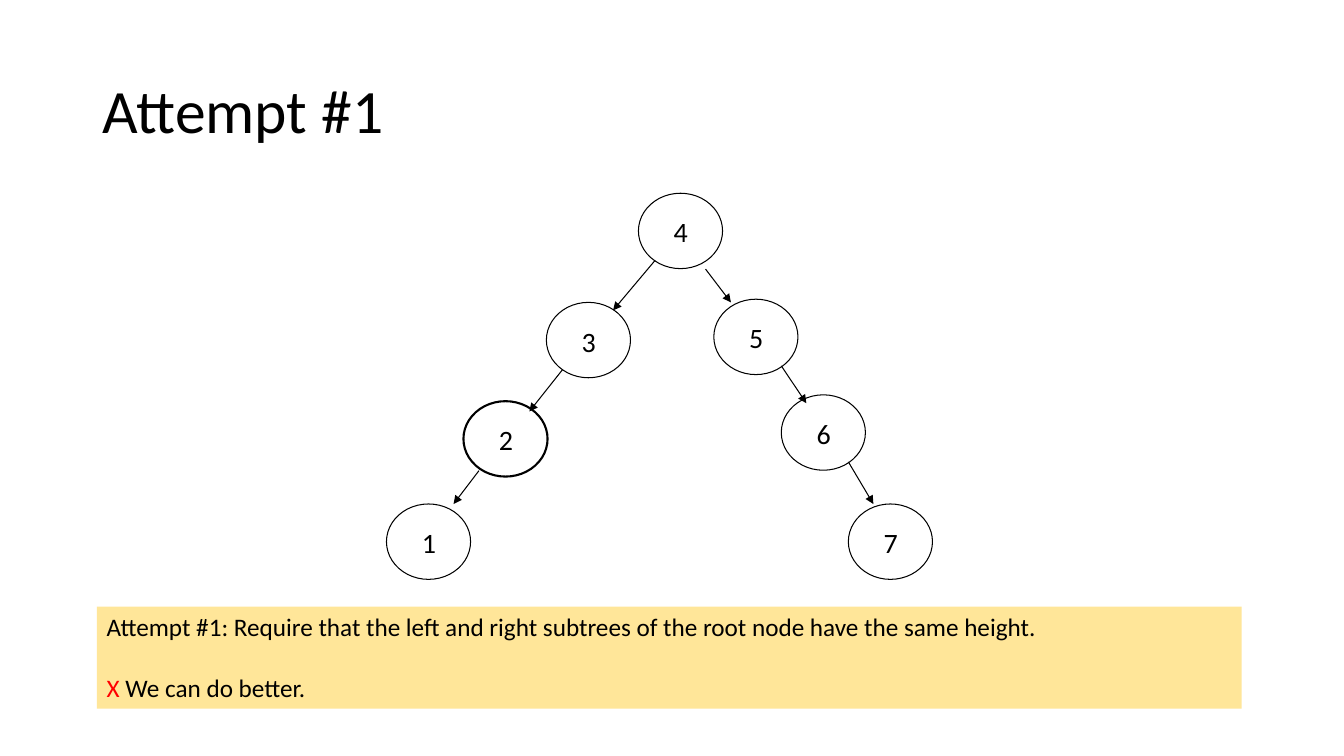
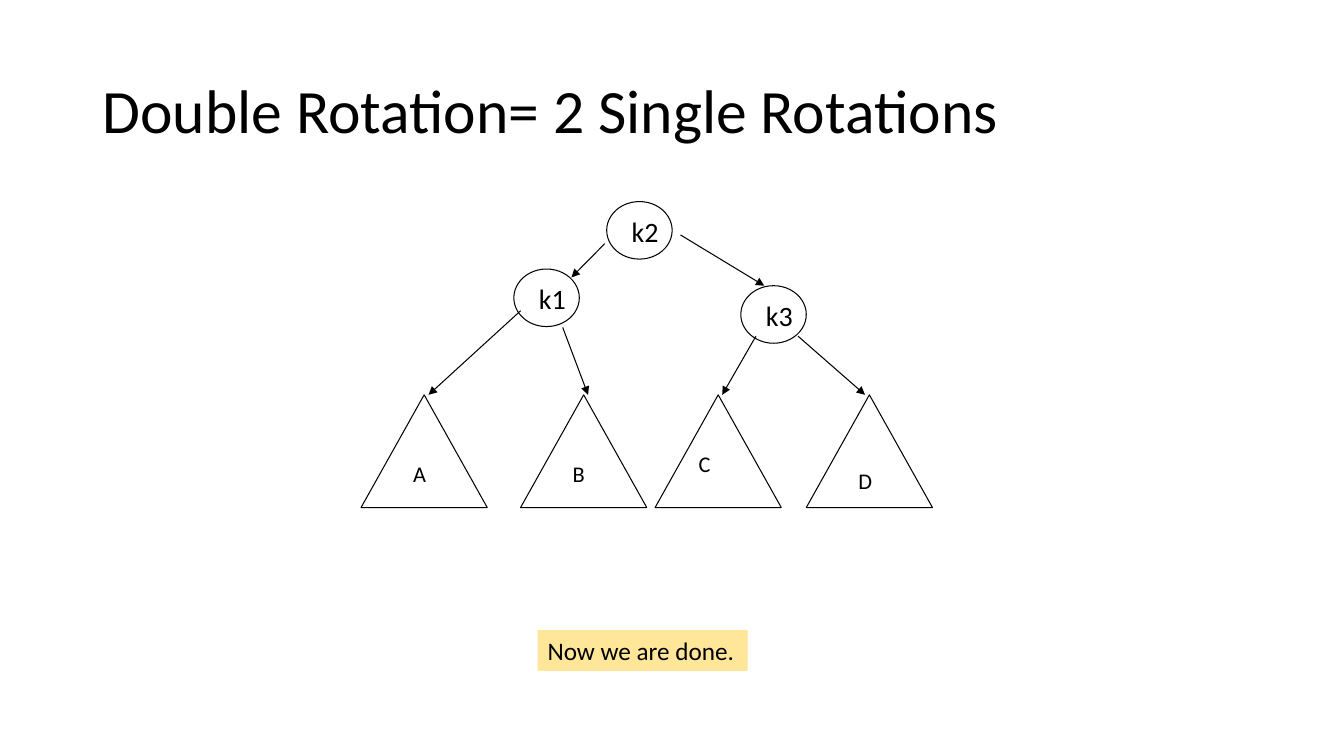
from lxml.etree import SubElement
from pptx import Presentation
from pptx.dml.color import RGBColor
from pptx.enum.shapes import MSO_CONNECTOR, MSO_SHAPE
from pptx.enum.text import MSO_ANCHOR, PP_ALIGN
from pptx.oxml.ns import qn
from pptx.util import Cm, Pt

BLACK = RGBColor(0x00, 0x00, 0x00)
RED = RGBColor(0xFF, 0x00, 0x00)
SAND = RGBColor(0xFF, 0xE6, 0x99)
FONT = "Calibri"
TREE_NODE = (2.12, 1.9)
KEY_NODE = (1.65, 1.45)
SUBTREE = (3.18, 2.84)


class Deck:
    """Holds the shared style and the current slide."""

    def __init__(self):
        self.prs = Presentation()
        self.prs.slide_width = Cm(33.87)
        self.prs.slide_height = Cm(19.05)
        self.s = None

    def slide(self, title):
        self.s = self.prs.slides.add_slide(self.prs.slide_layouts[5])
        sp = self.s.shapes.title
        sp.left, sp.top, sp.width, sp.height = Cm(2.33), Cm(1.01), Cm(29.21), Cm(3.68)
        tf = sp.text_frame
        tf.word_wrap = True
        tf.vertical_anchor = MSO_ANCHOR.MIDDLE
        p = tf.paragraphs[0]
        p.alignment = PP_ALIGN.LEFT
        p.line_spacing = 0.9
        self.run(p, title, 44)

    def run(self, p, text, size, color=BLACK):
        r = p.add_run()
        r.text = text
        r.font.name = FONT
        r.font.size = Pt(size)
        r.font.color.rgb = color

    def text(self, x, y, w, h, paragraphs, size, fill=None, gap=0):
        sp = self.s.shapes.add_textbox(Cm(x), Cm(y), Cm(w), Cm(h))
        if fill is not None:
            sp.fill.solid()
            sp.fill.fore_color.rgb = fill
        tf = sp.text_frame
        tf.word_wrap = True
        for i, runs in enumerate(paragraphs):
            p = tf.add_paragraph() if i else tf.paragraphs[0]
            if i:
                p.space_before = Pt(gap)
            for text, color in runs:
                self.run(p, text, size, color)

    def outline(self, kind, x, y, size, weight=0.75):
        sp = self.s.shapes.add_shape(kind, Cm(x), Cm(y), *map(Cm, size))
        sp.shadow.inherit = False
        sp.fill.background()
        sp.line.color.rgb = BLACK
        sp.line.width = Pt(weight)

    def tree_node(self, label, x, y, weight=0.75):
        self.outline(MSO_SHAPE.OVAL, x, y, TREE_NODE, weight)
        self.text(x + 0.64, y + 0.42, 0.86, 1.12, [[(label, BLACK)]], 20)

    def key_node(self, label, x, y):
        self.outline(MSO_SHAPE.OVAL, x, y, KEY_NODE)
        self.text(x + 0.38, y + 0.2, 1.22, 1.09, [[(label, BLACK)]], 20)

    def subtree(self, label, x, dx, dy):
        y = 9.95
        self.outline(MSO_SHAPE.FLOWCHART_EXTRACT, x, y, SUBTREE)
        self.text(x + dx, y + dy, 0.84, 0.94, [[(label, BLACK)]], 16)

    def arrow(self, x1, y1, x2, y2):
        c = self.s.shapes.add_connector(
            MSO_CONNECTOR.STRAIGHT, Cm(x1), Cm(y1), Cm(x2), Cm(y2))
        c.line.color.rgb = BLACK
        c.line.width = Pt(0.75)
        SubElement(c.line._get_or_add_ln(), qn("a:tailEnd"), type="triangle")
        SubElement(c._element.spPr, qn("a:effectLst"))

    def note(self, x, y, w, h, paragraphs):
        self.text(x, y, w, h, paragraphs, 18, SAND, gap=22)


def attempt(deck):
    deck.slide("Attempt #1")
    for node in [
        ("1", 9.74, 12.7),
        ("2", 11.68, 10.11, 1.5),
        ("3", 13.77, 7.62),
        ("4", 16.09, 4.87),
        ("5", 17.99, 7.54),
        ("6", 19.69, 9.95),
        ("7", 21.38, 12.7),
    ]:
        deck.tree_node(*node)
    for ends in [
        (16.51, 6.56, 15.45, 7.82),
        (14.18, 9.31, 13.34, 10.37),
        (12.07, 11.86, 11.43, 12.7),
        (17.78, 6.78, 18.42, 7.62),
        (19.69, 9.22, 20.32, 10.16),
        (21.38, 11.64, 22.01, 12.7),
    ]:
        deck.arrow(*ends)
    deck.note(2.44, 15.29, 28.85, 2.57, [
        [("Attempt #1: Require that the left and right subtrees of the root node "
          "have the same height.", BLACK)],
        [("X ", RED), ("We can do better.", BLACK)],
    ])


def double_rotation(deck):
    deck.slide("Double Rotation= 2 Single Rotations")
    for node in [("k2", 15.29, 5.08), ("k1", 12.95, 6.78), ("k3", 18.67, 7.2)]:
        deck.key_node(*node)
    for tree in [
        ("A", 9.1, 1.06, 1.53),
        ("B", 13.12, 1.06, 1.53),
        ("C", 16.51, 0.85, 1.27),
        ("D", 20.32, 1.06, 1.69),
    ]:
        deck.subtree(*tree)
    for ends in [
        (15.24, 6.14, 14.4, 6.99),
        (17.15, 5.92, 19.26, 7.2),
        (13.12, 7.83, 10.8, 9.95),
        (14.18, 8.25, 14.82, 9.95),
        (19.05, 8.47, 18.2, 9.95),
        (20.11, 8.47, 21.8, 9.95),
    ]:
        deck.arrow(*ends)
    deck.note(13.55, 15.88, 5.29, 1.03, [[("Now we are done.", BLACK)]])


def main():
    deck = Deck()
    attempt(deck)
    double_rotation(deck)
    deck.prs.save("out.pptx")


if __name__ == "__main__":
    main()
